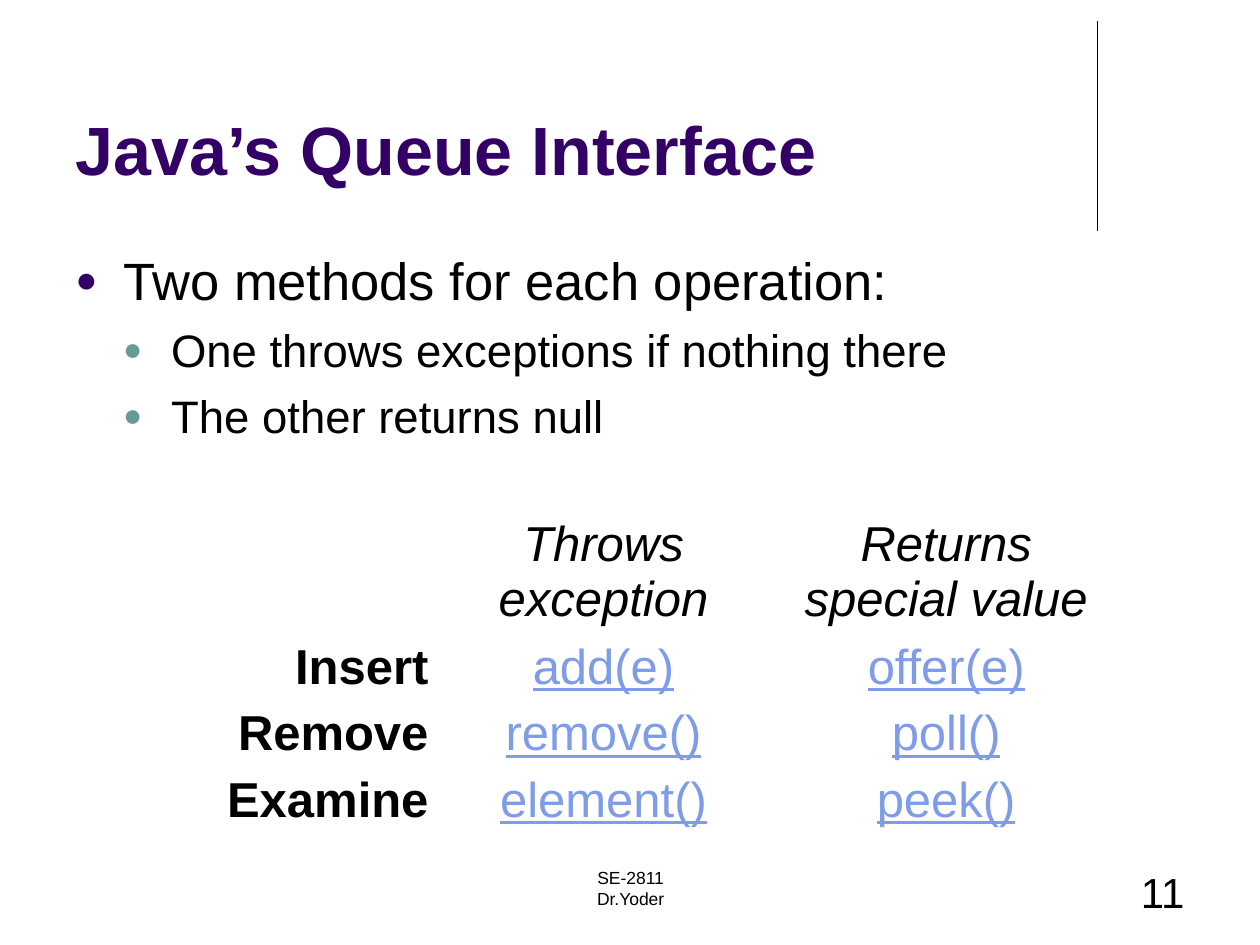
from lxml import etree
from pptx import Presentation
from pptx.dml.color import RGBColor
from pptx.enum.shapes import MSO_CONNECTOR
from pptx.enum.text import MSO_ANCHOR, PP_ALIGN
from pptx.oxml.ns import qn
from pptx.util import Inches, Pt

LEFT, CENTER, RIGHT = PP_ALIGN.LEFT, PP_ALIGN.CENTER, PP_ALIGN.RIGHT
TOP, MIDDLE, BOTTOM = MSO_ANCHOR.TOP, MSO_ANCHOR.MIDDLE, MSO_ANCHOR.BOTTOM
STRAIGHT = MSO_CONNECTOR.STRAIGHT
COLORS = {"text": "000000", "purple": "330066", "teal": "669999",
          "link": "7E9CE8", "white": "FFFFFF"}


def write(p, text, size, color="text", bold=False, italic=False,
          underline=False, align=LEFT, before=0, bullet=None, indent=0):
    if bullet:
        pPr = p._p.get_or_add_pPr()
        pPr.set("marL", str(Inches(indent)))
        pPr.set("indent", str(Inches(-0.38)))
        clr = etree.SubElement(pPr, qn("a:buClr"))
        etree.SubElement(clr, qn("a:srgbClr")).set("val", COLORS[bullet])
        etree.SubElement(pPr, qn("a:buSzPct")).set("val", "70000")
        etree.SubElement(pPr, qn("a:buFont")).set("typeface", "Arial")
        etree.SubElement(pPr, qn("a:buChar")).set("char", "●")
    p.alignment = align
    p.space_before = Pt(before)
    r = p.add_run()
    r.text = text
    f = r.font
    f.name, f.size = "Arial", Pt(size)
    f.bold, f.italic, f.underline = bold, italic, underline
    f.color.rgb = RGBColor.from_string(COLORS[color])


def add_box(s, x, y, w, h, anchor=TOP):
    tf = s.shapes.add_textbox(Inches(x), Inches(y), Inches(w), Inches(h)).text_frame
    tf.word_wrap = True
    tf.vertical_anchor = anchor
    return tf


prs = Presentation()
prs.slide_width, prs.slide_height = Inches(10), Inches(7.5)
s = prs.slides.add_slide(prs.slide_layouts[6])

rule = s.shapes.add_connector(STRAIGHT, Inches(8.71), Inches(0.17), Inches(8.71), Inches(1.83))
rule.line.color.rgb = RGBColor.from_string(COLORS["text"])
rule.line.width = Pt(0.75)
etree.SubElement(rule._element.spPr, qn("a:effectLst"))

title = add_box(s, 0.5, 0.13, 8.25, 1.42, anchor=BOTTOM)
write(title.paragraphs[0], "Java’s Queue Interface", 39, color="purple", bold=True)

body = add_box(s, 0.5, 1.92, 9, 1.91)
write(body.paragraphs[0], "Two methods for each operation:", 30, bullet="purple", indent=0.38)
for text in ("One throws exceptions if nothing there", "The other returns null"):
    write(body.add_paragraph(), text, 26, before=6.5, bullet="teal", indent=0.76)

rows = [("", "Throws exception", "Returns special value"),
        ("Insert", "add(e)", "offer(e)"),
        ("Remove", "remove()", "poll()"),
        ("Examine", "element()", "peek()")]
table = s.shapes.add_table(4, 3, Inches(0.71), Inches(4.04), Inches(8.16), Inches(2.37)).table
table.first_row = table.horz_banding = False
for col in table.columns:
    col.width = Inches(2.72)
for i, row in enumerate(rows):
    table.rows[i].height = Inches(0.48 if i else 0.93)
    for j, text in enumerate(row):
        cell = table.cell(i, j)
        cell.fill.solid()
        cell.fill.fore_color.rgb = RGBColor.from_string(COLORS["white"])
        cell.vertical_anchor = MIDDLE
        cell.margin_left = cell.margin_right = Inches(0.03)
        cell.margin_top = cell.margin_bottom = Inches(0.03)
        if text:
            link = i > 0 and j > 0
            write(cell.text_frame.paragraphs[0], text, 28,
                  color="link" if link else "text", bold=j == 0,
                  italic=i == 0, underline=link, align=CENTER if j else RIGHT)

footer = add_box(s, 3.42, 6.83, 3.17, 0.5)
write(footer.paragraphs[0], "SE-2811", 10, align=CENTER)
write(footer.add_paragraph(), "Dr.Yoder", 10, align=CENTER)

number = add_box(s, 7.17, 6.83, 2.33, 0.5)
write(number.paragraphs[0], "11", 24, align=RIGHT)

prs.save("out.pptx")
